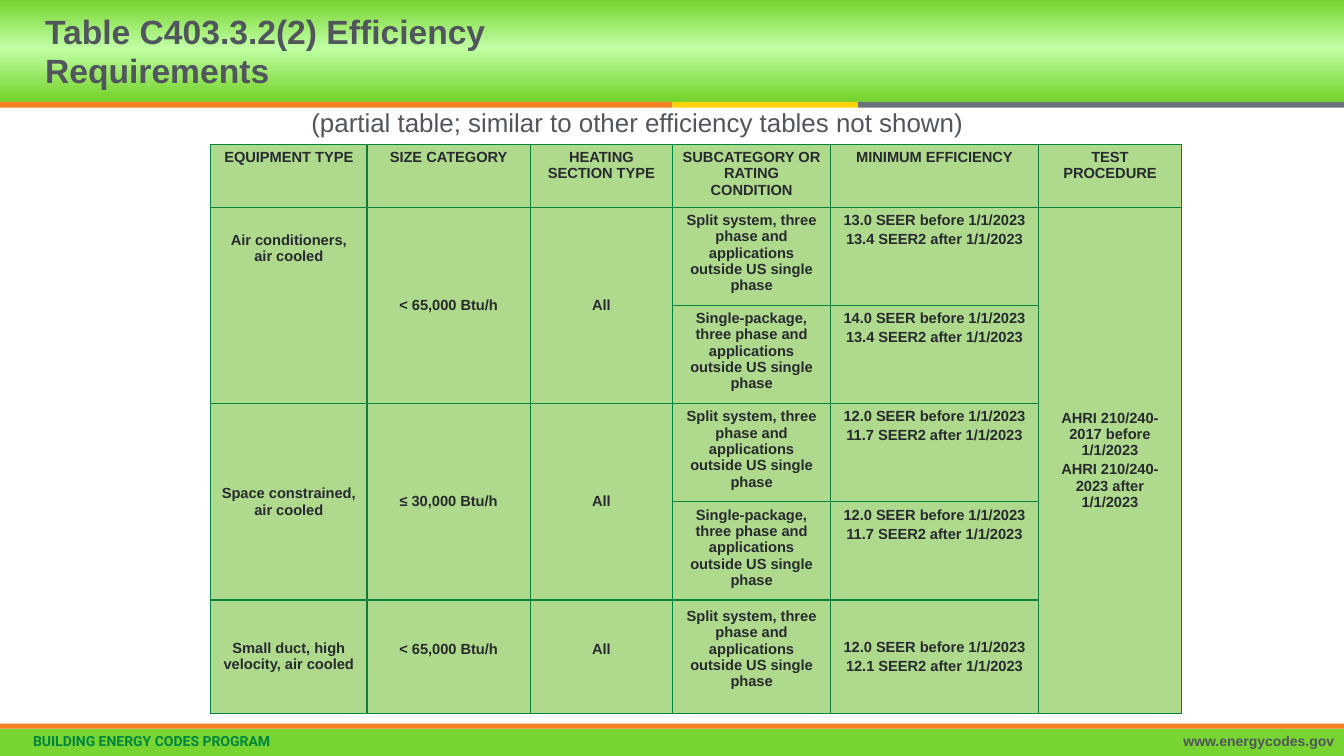
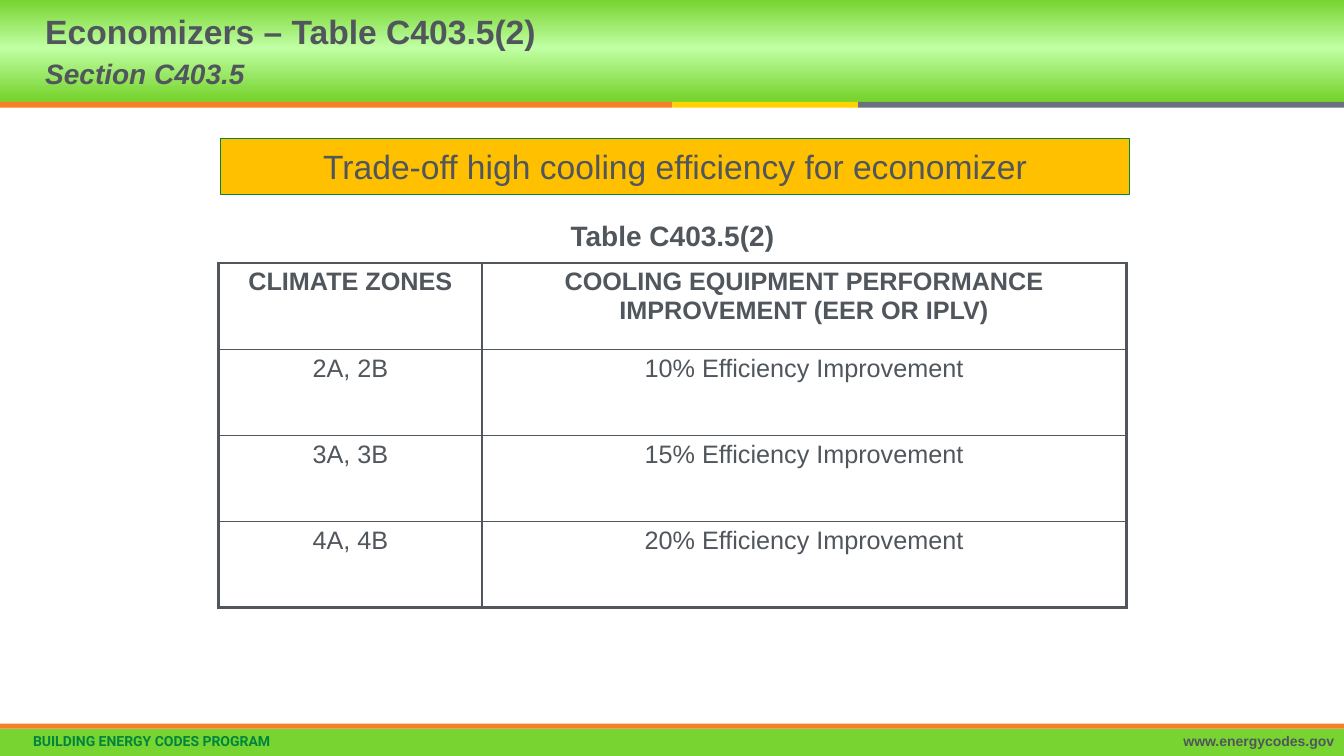
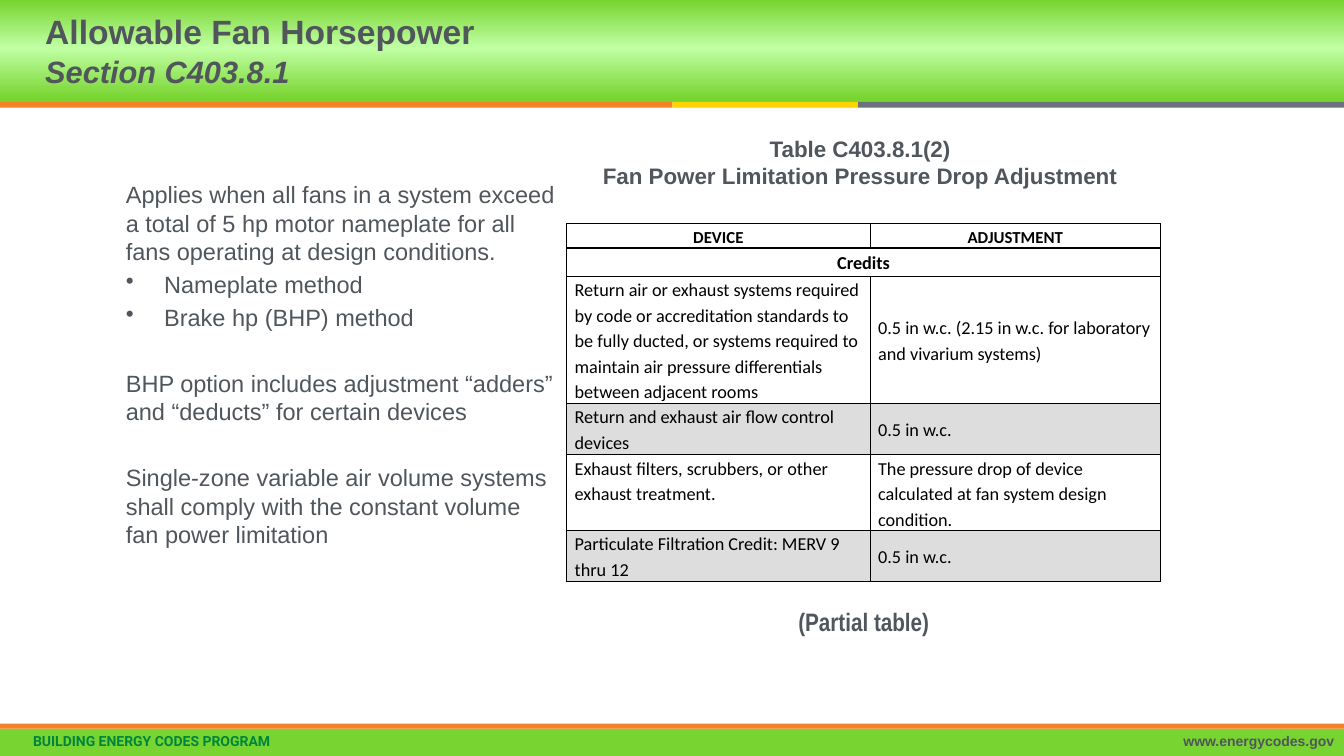
from lxml import etree
from pptx import Presentation
from pptx.dml.color import RGBColor
from pptx.enum.shapes import MSO_SHAPE
from pptx.enum.text import MSO_ANCHOR, PP_ALIGN
from pptx.oxml.ns import qn
from pptx.util import Inches, Pt

RECT = MSO_SHAPE.RECTANGLE
TOP, MIDDLE = MSO_ANCHOR.TOP, MSO_ANCHOR.MIDDLE
LEFT, CENTER, RIGHT = PP_ALIGN.LEFT, PP_ALIGN.CENTER, PP_ALIGN.RIGHT

LIME = RGBColor(0x78, 0xD4, 0x30)
PALE_LIME = RGBColor(0xC0, 0xFF, 0xA4)
GREEN = RGBColor(0x00, 0x85, 0x3F)
SAGE = RGBColor(0xAF, 0xDA, 0x8E)
ORANGE = RGBColor(0xF5, 0x80, 0x25)
YELLOW = RGBColor(0xFF, 0xD2, 0x00)
AMBER = RGBColor(0xFF, 0xC0, 0x00)
STEEL = RGBColor(0x6A, 0x73, 0x7B)
GRAY = RGBColor(0x50, 0x56, 0x5C)
DARK = RGBColor(0x28, 0x2B, 0x2E)
SILVER = RGBColor(0xDD, 0xDD, 0xDD)
BLACK = RGBColor(0, 0, 0)

WIDTH, HEIGHT = 13.33, 7.5
HEADER_H = 1.01
FOOTER_Y = 7.23
TEXT_X = 0.35

SPLIT = "Split system, three phase and applications outside US single phase"
SINGLE = "Single-package, three phase and applications outside US single phase"


def add_run(p, text, size, font="Arial", color=GRAY, bold=False, italic=False):
    r = p.add_run()
    r.text = text
    r.font.size, r.font.name = Pt(size), font
    r.font.bold, r.font.italic = bold, italic
    r.font.color.rgb = color


def write(tf, text, size, align=LEFT, gap=0, spacing=None, **look):
    """Fill a frame: \\n starts a paragraph, \\v breaks a line."""
    for i, paragraph in enumerate(text.split("\n")):
        p = tf.paragraphs[0] if i == 0 else tf.add_paragraph()
        p.alignment = align
        if i:
            p.space_before = Pt(gap)
        if spacing:
            p.line_spacing = spacing
        for j, line in enumerate(paragraph.split("\v")):
            if j:
                p.add_line_break()
            add_run(p, line, size, **look)


def add_box(s, x, y, w, h, anchor=TOP):
    tf = s.shapes.add_textbox(*map(Inches, (x, y, w, h))).text_frame
    tf.word_wrap = True
    tf.vertical_anchor = anchor
    return tf


def add_rect(s, x, y, w, h, color):
    sp = s.shapes.add_shape(RECT, *map(Inches, (x, y, w, h)))
    sp.shadow.inherit = False
    sp.fill.solid()
    sp.fill.fore_color.rgb = color
    sp.line.fill.background()
    return sp


def set_gradient(sp, stops):
    """Replace the solid fill by a top-to-bottom gradient."""
    solid = sp.element.spPr.find(qn("a:solidFill"))
    grad = etree.Element(qn("a:gradFill"), rotWithShape="1")
    gs_list = etree.SubElement(grad, qn("a:gsLst"))
    for percent, color in stops:
        gs = etree.SubElement(gs_list, qn("a:gs"), pos=str(percent * 1000))
        etree.SubElement(gs, qn("a:srgbClr"), val=str(color))
    etree.SubElement(grad, qn("a:lin"), ang="5400000", scaled="0")
    solid.getparent().replace(solid, grad)


def add_bullet(p, indent):
    pPr = p._p.get_or_add_pPr()
    pPr.set("marL", str(Inches(indent)))
    pPr.set("indent", str(-Inches(indent)))
    etree.SubElement(pPr, qn("a:buChar"), char="•")


def add_frame(prs, title, subtitle="", subtitle_size=20):
    """Start a slide with the shared bands, title and footer."""
    s = prs.slides.add_slide(prs.slide_layouts[6])
    header = add_rect(s, 0, 0, WIDTH, HEADER_H, LIME)
    set_gradient(header, [(0, LIME), (47, PALE_LIME), (97, LIME)])
    add_rect(s, 0, FOOTER_Y, WIDTH, HEIGHT - FOOTER_Y, LIME)
    x = 0
    for w, color in ((6.67, ORANGE), (1.84, YELLOW), (4.82, STEEL)):
        add_rect(s, x, HEADER_H, w, 0.06, color)
        x += w
    add_rect(s, 0, FOOTER_Y - 0.05, WIDTH, 0.05, ORANGE)
    write(add_box(s, 0.23, 7.24, 5, 0.26), "BUILDING ENERGY CODES PROGRAM", 10,
          spacing=0.9, font="Roboto", color=GREEN, bold=True)
    write(add_box(s, 8, 7.24, WIDTH - 8, 0.26), "www.energycodes.gov", 10,
          align=RIGHT, spacing=0.9, bold=True)

    tf = add_box(s, TEXT_X, 0, 5.9, HEADER_H, MIDDLE)
    p = tf.paragraphs[0]
    p.line_spacing = Pt(28)
    add_run(p, title, 24, bold=True)
    if subtitle:
        p.add_line_break()
        add_run(p, subtitle, subtitle_size, bold=True, italic=True)
    return s


def set_borders(cell, color, widths):
    """Draw the left, right, top and bottom edges, widths in points."""
    tcPr = cell._tc.get_or_add_tcPr()
    for side, width in zip("LRTB", widths):
        ln = etree.SubElement(tcPr, qn("a:ln" + side), w=str(Pt(width)))
        fill = etree.SubElement(ln, qn("a:solidFill"))
        etree.SubElement(fill, qn("a:srgbClr"), val=str(color))


def add_grid(s, x, y, cols, rows, line, outer=1, margins=(0.1, 0.05)):
    """Add an unfilled table with ruled cells."""
    size = (sum(cols), sum(rows))
    table = s.shapes.add_table(len(rows), len(cols),
                               *map(Inches, (x, y, *size))).table
    table.first_row = table.horz_banding = False
    for column, w in zip(table.columns, cols):
        column.width = Inches(w)
    for row, h in zip(table.rows, rows):
        row.height = Inches(h)
    last_row, last_col = len(rows) - 1, len(cols) - 1
    for i in range(len(rows)):
        for j in range(len(cols)):
            cell = table.cell(i, j)
            edges = (j == 0, j == last_col, i == 0, i == last_row)
            set_borders(cell, line, [outer if edge else 1 for edge in edges])
            cell.fill.background()
            cell.margin_left = cell.margin_right = Inches(margins[0])
            cell.margin_top = cell.margin_bottom = Inches(margins[1])
    return table


def shade(cell, color):
    cell.fill.solid()
    cell.fill.fore_color.rgb = color


def efficiency_slide(prs):
    s = add_frame(prs, "Table C403.3.2(2) Efficiency Requirements")
    table = add_grid(s, 2.09, 1.43, [1.55, 1.62, 1.41, 1.57, 2.06, 1.42],
                     [0.62] + [0.91] * 4 + [1.07], GREEN)
    for cell in table.iter_cells():
        shade(cell, SAGE)
    for top, bottom, col in [(1, 2, 0), (1, 2, 1), (1, 2, 2), (3, 4, 0),
                             (3, 4, 1), (3, 4, 2), (1, 5, 5)]:
        table.cell(top, col).merge(table.cell(bottom, col))
    content = [
        ["EQUIPMENT TYPE", "SIZE CATEGORY", "HEATING SECTION TYPE",
         "SUBCATEGORY OR RATING CONDITION", "MINIMUM EFFICIENCY",
         "TEST PROCEDURE"],
        ["Air conditioners,\vair cooled", "< 65,000 Btu/h", "All", SPLIT,
         "13.0 SEER before 1/1/2023\n13.4 SEER2 after 1/1/2023",
         "AHRI 210/240-2017 before 1/1/2023\nAHRI 210/240-2023 after 1/1/2023"],
        ["", "", "", SINGLE,
         "14.0 SEER before 1/1/2023\n13.4 SEER2 after 1/1/2023", ""],
        ["Space constrained, air cooled", "≤ 30,000 Btu/h", "All", SPLIT,
         "12.0 SEER before 1/1/2023\n11.7 SEER2 after 1/1/2023", ""],
        ["", "", "", SINGLE,
         "12.0 SEER before 1/1/2023\n11.7 SEER2 after 1/1/2023", ""],
        ["Small duct, high velocity, air cooled", "< 65,000 Btu/h", "All", SPLIT,
         "12.0 SEER before 1/1/2023\n12.1 SEER2 after 1/1/2023", ""],
    ]
    for i, row in enumerate(content):
        for j, text in enumerate(row):
            if text:
                cell = table.cell(i, j)
                write(cell.text_frame, text, 10.5, align=CENTER, gap=2,
                      color=DARK, bold=True)
                if i == 5 or (i and j not in (3, 4)):
                    cell.vertical_anchor = MIDDLE
    air_conditioners = table.cell(1, 0)
    air_conditioners.vertical_anchor = TOP
    air_conditioners.margin_top = Inches(0.25)
    for col in (1, 2, 3):
        table.cell(5, col).margin_bottom = Inches(0.2)
    write(add_box(s, 2.99, HEADER_H, 7, 0.4),
          "(partial table; similar to other efficiency tables not shown)", 18.5)


def economizer_slide(prs):
    s = add_frame(prs, "Economizers – Table C403.5(2)", "Section C403.5")
    table = add_grid(s, 2.17, 2.61, [2.61, 6.39], [0.855] * 4, GRAY,
                     outer=2.25, margins=(0.12, 0.05))
    content = [
        ("CLIMATE ZONES",
         "COOLING EQUIPMENT PERFORMANCE IMPROVEMENT (EER OR IPLV)"),
        ("2A, 2B", "10% Efficiency Improvement"),
        ("3A, 3B", "15% Efficiency Improvement"),
        ("4A, 4B", "20% Efficiency Improvement"),
    ]
    for i, row in enumerate(content):
        for j, text in enumerate(row):
            write(table.cell(i, j).text_frame, text, 18, align=CENTER,
                  bold=i == 0)
    banner = add_rect(s, 2.19, 1.37, 9.01, 0.56, AMBER)
    banner.line.color.rgb = GREEN
    banner.line.width = Pt(0.75)
    banner.text_frame.word_wrap = True
    banner.text_frame.vertical_anchor = MIDDLE
    write(banner.text_frame, "Trade-off high cooling efficiency for economizer",
          24, align=CENTER)
    write(add_box(s, 4.3, 2.12, 4.74, 0.43), "Table C403.5(2)", 20,
          align=CENTER, bold=True)


def fan_slide(prs):
    s = add_frame(prs, "Allowable Fan Horsepower", "Section C403.8.1", 22)
    tf = add_box(s, 1.15, 1.74, 4.47, 3.89)
    points = [
        ("Applies when all fans in a system exceed a total of 5 hp motor "
         "nameplate for all fans operating at design conditions.", 0, False),
        ("Nameplate method", 3.4, True),
        ("Brake hp (BHP) method", 3.4, True),
        ("BHP option includes adjustment “adders” and “deducts” for certain "
         "devices", 27, False),
        ("Single-zone variable air volume systems shall comply with the "
         "constant volume fan power limitation", 27, False),
    ]
    for i, (text, gap, bulleted) in enumerate(points):
        p = tf.add_paragraph() if i else tf.paragraphs[0]
        if gap:
            p.space_before = Pt(gap)
        if bulleted:
            add_bullet(p, 0.38)
        add_run(p, text, 16.8)

    table = add_grid(s, 5.62, 2.22, [3.01, 2.88],
                     [0.24, 0.28, 1.26, 0.51, 0.75, 0.51], BLACK,
                     margins=(0.08, 0))
    table.cell(1, 0).merge(table.cell(1, 1))
    content = [
        ("DEVICE", "ADJUSTMENT"),
        ("Credits", ""),
        ("Return air or exhaust systems required by code or accreditation "
         "standards to be fully ducted, or systems required to maintain air "
         "pressure differentials between adjacent rooms",
         "0.5 in w.c. (2.15 in w.c. for laboratory and vivarium systems)"),
        ("Return and exhaust air flow control devices", "0.5 in w.c."),
        ("Exhaust filters, scrubbers, or other exhaust treatment.",
         "The pressure drop of device calculated at fan system design "
         "condition."),
        ("Particulate Filtration Credit: MERV 9 thru 12", "0.5 in w.c."),
    ]
    for i, row in enumerate(content):
        heading = i < 2
        for j, text in enumerate(row):
            cell = table.cell(i, j)
            cell.vertical_anchor = TOP if i == 4 else MIDDLE
            if i in (3, 5):
                shade(cell, SILVER)
            if text:
                write(cell.text_frame, text, 13 if i else 12,
                      align=CENTER if heading else LEFT, spacing=1.15,
                      font="Calibri", color=BLACK, bold=heading)
    write(add_box(s, 7.82, 5.97, 2.93, 0.34), "(Partial table)", 18,
          font="Arial Narrow", bold=True)
    write(add_box(s, 5.82, 1.29, 5.42, 0.64),
          "Table C403.8.1(2)\vFan Power Limitation Pressure Drop Adjustment",
          16, align=CENTER, bold=True)


def main():
    prs = Presentation()
    prs.slide_width, prs.slide_height = Inches(WIDTH), Inches(HEIGHT)
    efficiency_slide(prs)
    economizer_slide(prs)
    fan_slide(prs)
    prs.save("out.pptx")


if __name__ == "__main__":
    main()
